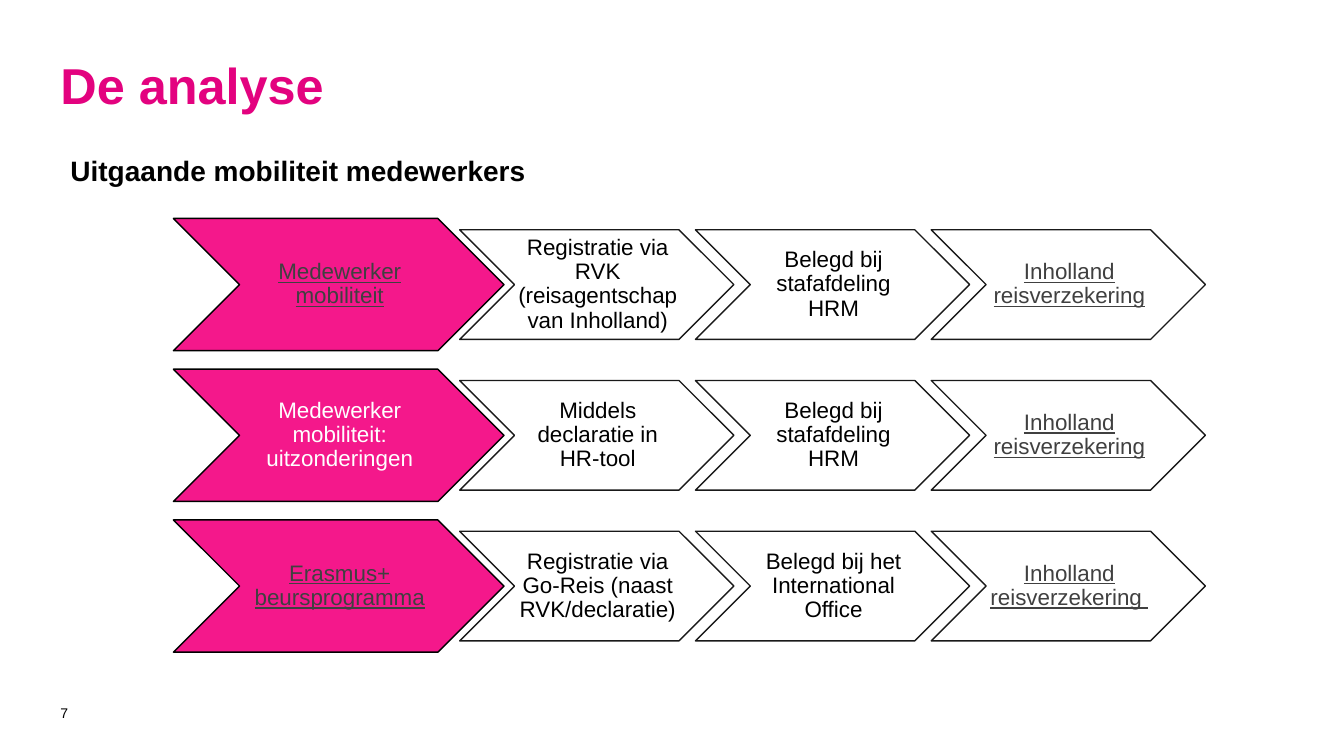
from lxml import etree
from pptx import Presentation
from pptx.dml.color import RGBColor
from pptx.enum.shapes import MSO_SHAPE
from pptx.enum.text import MSO_ANCHOR, PP_ALIGN
from pptx.oxml.ns import qn
from pptx.util import Emu, Inches, Pt

CHEVRON = MSO_SHAPE.CHEVRON
TOP, MIDDLE, BOTTOM = MSO_ANCHOR.TOP, MSO_ANCHOR.MIDDLE, MSO_ANCHOR.BOTTOM
LEFT, CENTER = PP_ALIGN.LEFT, PP_ALIGN.CENTER

MAGENTA = RGBColor(0xE3, 0x02, 0x7F)
PINK = RGBColor(0xF4, 0x18, 0x8B)
BLACK = RGBColor(0, 0, 0)
WHITE = RGBColor(0xFF, 0xFF, 0xFF)
LINK_GRAY = RGBColor(0x40, 0x40, 0x40)

# Chevron grid: positions and widths in percent of the slide
LEAD_LEFT, LEAD_WIDTH = 12.9, 24.6
STEP_LEFT, STEP_WIDTH = 34.2, 20.4
FIRST_ROW_TOP = 28.9
STEP_PITCH = 0.86  # share of a step's width
ROW_PITCH = 1.14  # share of a lead's height
CHEVRON_RATIO = 0.4  # height to width

INSURANCE = "Inholland reisverzekering"
# Each row: lead and its steps, as (text, is underlined)
PROCESSES = [
    [("Medewerker mobiliteit", True),
     ("Registratie via RVK (reisagentschap van Inholland)", False),
     ("Belegd bij stafafdeling HRM", False),
     (INSURANCE, True)],
    [("Medewerker mobiliteit: uitzonderingen", False),
     ("Middels declaratie in HR-tool", False),
     ("Belegd bij stafafdeling HRM", False),
     (INSURANCE, True)],
    [("Erasmus+ beursprogramma", True),
     ("Registratie via Go-Reis (naast RVK/declaratie)", False),
     ("Belegd bij het International Office", False),
     (INSURANCE + " ", True)],
]


class SlideBuilder:
    """Holds the deck, its current page and the shared style."""

    font_name = "Arial"

    def __init__(self):
        self.deck = Presentation()
        self.deck.slide_width = Inches(13.33)
        self.deck.slide_height = Inches(7.5)
        self.page = self.deck.slides.add_slide(self.deck.slide_layouts[5])

    def across(self, percent):
        return Emu(round(self.deck.slide_width * percent / 100))

    def down(self, percent):
        return Emu(round(self.deck.slide_height * percent / 100))

    def area(self, left, top, width, height):
        return self.across(left), self.down(top), self.across(width), self.down(height)

    def frame(self, box, anchor, insets):
        """Set wrapping, anchor and insets (left, top, right, bottom in inches)."""
        frame = box.text_frame
        frame.word_wrap = True
        frame.vertical_anchor = anchor
        (frame.margin_left, frame.margin_top,
         frame.margin_right, frame.margin_bottom) = map(Inches, insets)
        return frame

    def style(self, para, size, color, align=LEFT, bold=False):
        para.alignment = align
        para.font.name = self.font_name
        para.font.size = Pt(size)
        para.font.bold = bold
        para.font.color.rgb = color

    def title(self, text):
        box = self.page.shapes.title
        box.left, box.top, box.width, box.height = self.area(4.5, 4.8, 91, 10.4)
        frame = self.frame(box, BOTTOM, (0, 0, 0, 0))
        frame.text = text
        self.style(frame.paragraphs[0], 36, MAGENTA, bold=True)

    def subtitle(self, text):
        box = self.page.shapes.add_textbox(*self.area(4.5, 19.6, 91, 5.8))
        frame = self.frame(box, TOP, (0.1, 0.05, 0.1, 0.05))
        frame.text = text
        self.style(frame.paragraphs[0], 20, BLACK, bold=True)

    def page_number(self, number):
        box = self.page.shapes.add_textbox(*self.area(4.5, 93.3, 2.2, 1.9))
        para = self.frame(box, MIDDLE, (0, 0, 0, 0)).paragraphs[0]
        run = para.add_run()
        run.text = number
        run.font.size = Pt(10)
        run.font.name = self.font_name
        run.font.color.rgb = BLACK
        self.style(para, 10, BLACK)

    def chevron(self, left, middle, width, text, fill, color, underlined):
        """Draw a chevron centred vertically on middle; lengths in EMU."""
        height = round(width * CHEVRON_RATIO)
        shape = self.page.shapes.add_shape(
            CHEVRON, left, middle - height // 2, width, height)
        shape.shadow.inherit = False
        shape.fill.solid()
        shape.fill.fore_color.rgb = fill
        shape.line.color.rgb = BLACK
        shape.line.width = Pt(1)
        if fill == WHITE:
            for solid in shape._element.spPr.iter(qn("a:solidFill")):
                etree.SubElement(solid[0], qn("a:alpha"), val="90000")
        frame = self.frame(shape, MIDDLE, (0.02, 0.01, 0, 0.01))
        frame.text = text
        para = frame.paragraphs[0]
        self.style(para, 16, LINK_GRAY if underlined else color, CENTER)
        para.font.underline = underlined
        para.line_spacing = 0.9

    def process(self, row, lead, steps):
        lead_width = self.across(LEAD_WIDTH)
        lead_height = lead_width * CHEVRON_RATIO
        middle = round(self.down(FIRST_ROW_TOP) + lead_height * (0.5 + row * ROW_PITCH))
        lead_text, underlined = lead
        self.chevron(self.across(LEAD_LEFT), middle, lead_width,
                     lead_text, PINK, WHITE, underlined)
        for column, (text, underlined) in enumerate(steps):
            left = self.across(STEP_LEFT + column * STEP_PITCH * STEP_WIDTH)
            self.chevron(left, middle, self.across(STEP_WIDTH),
                         text, WHITE, BLACK, underlined)


def main():
    builder = SlideBuilder()
    builder.page_number("7")
    builder.title("De analyse")
    builder.subtitle("Uitgaande mobiliteit medewerkers")
    for row, (lead, *steps) in enumerate(PROCESSES):
        builder.process(row, lead, steps)
    builder.deck.save("out.pptx")


if __name__ == "__main__":
    main()
